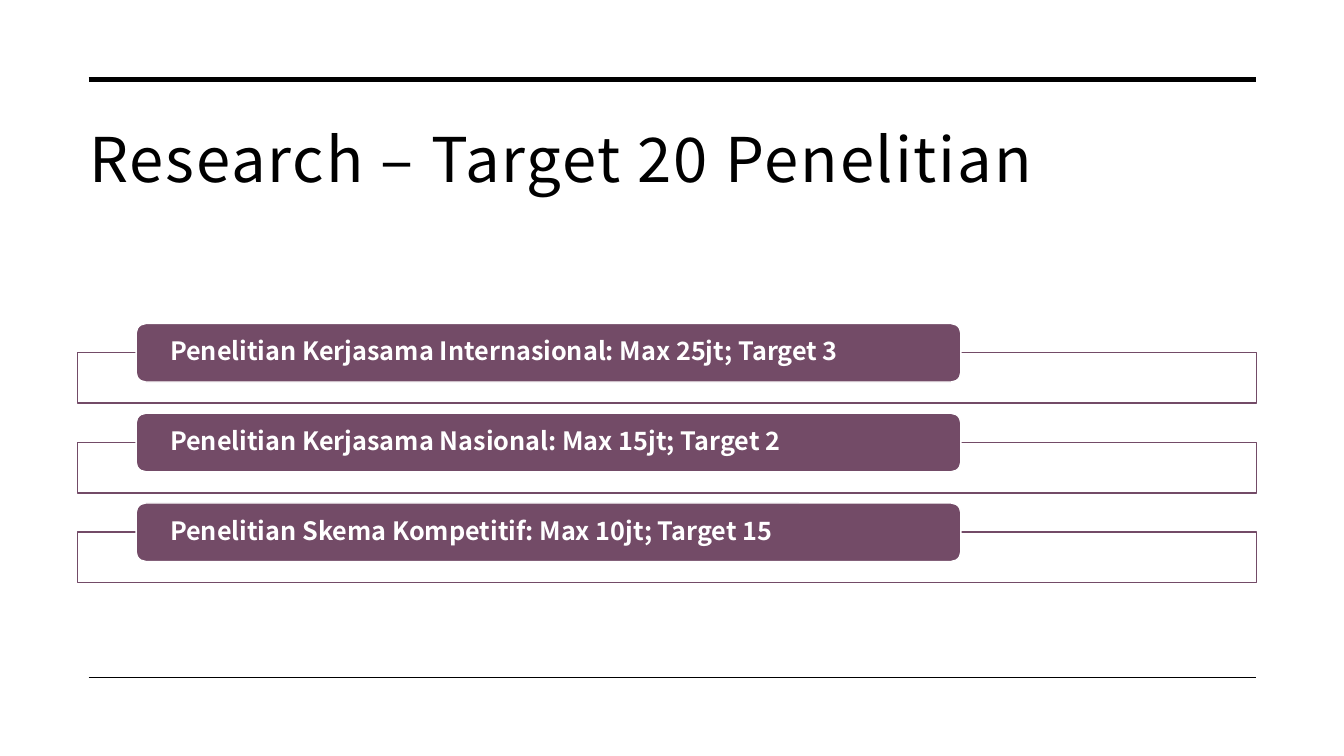
from dataclasses import dataclass

from lxml.etree import SubElement
from pptx import Presentation
from pptx.dml.color import RGBColor
from pptx.enum.shapes import MSO_CONNECTOR as Connector, MSO_SHAPE as Shape
from pptx.enum.text import MSO_ANCHOR as Anchor, PP_ALIGN as Align
from pptx.oxml.ns import qn
from pptx.util import Inches, Pt


@dataclass(frozen=True)
class Theme:
    font: str = "Noto Sans CJK JP"
    ink: RGBColor = RGBColor(0x00, 0x00, 0x00)
    paper: RGBColor = RGBColor(0xFF, 0xFF, 0xFF)
    plum: RGBColor = RGBColor(0x73, 0x4B, 0x67)
    title_size: int = 44
    label_size: int = 18


class SlideBuilder:
    def __init__(self, slide, theme):
        self.slide = slide
        self.theme = theme

    def rule(self, left, right, y, weight):
        line = self.slide.shapes.add_connector(
            Connector.STRAIGHT, Inches(left), Inches(y), Inches(right), Inches(y))
        line.line.color.rgb = self.theme.ink
        line.line.width = Pt(weight)
        SubElement(line._element.spPr, qn("a:effectLst"))

    def box(self, kind, left, top, width, height, fill, outline, opacity=100):
        shape = self.slide.shapes.add_shape(
            kind, Inches(left), Inches(top), Inches(width), Inches(height))
        shape.shadow.inherit = False
        shape.fill.solid()
        shape.fill.fore_color.rgb = fill
        shape.line.color.rgb = outline
        shape.line.width = Pt(1)
        if opacity < 100:
            color = shape._element.spPr.find(qn("a:solidFill"))[0]
            SubElement(color, qn("a:alpha"), val=str(opacity * 1000))
        return shape

    def add_words(self, shape, words, size, color, margins, anchor,
                  leading, bold=False, tracking=0):
        frame = shape.text_frame
        frame.word_wrap = True
        frame.vertical_anchor = anchor
        (frame.margin_left, frame.margin_top,
         frame.margin_right, frame.margin_bottom) = map(Inches, margins)
        paragraph = frame.paragraphs[0]
        paragraph.alignment = Align.LEFT
        paragraph.line_spacing = leading
        run = paragraph.add_run()
        run.text = words
        run.font.name = self.theme.font
        run.font.size = Pt(size)
        run.font.bold = bold
        run.font.color.rgb = color
        if tracking:
            run.font._element.set("spc", str(round(tracking * 100)))

    def title(self, words, left, top, width, height):
        heading = self.slide.shapes.add_textbox(
            Inches(left), Inches(top), Inches(width), Inches(height))
        self.add_words(heading, words, self.theme.title_size, self.theme.ink,
                       (0.12, 0.12, 0.12, 0.1), Anchor.TOP, 1.1, tracking=1.3)

    def scheme(self, words, top):
        """A wide outlined frame with a filled label over its top edge."""
        theme = self.theme
        self.box(Shape.RECTANGLE, 0.77, top + 0.29, 11.69, 0.5,
                 theme.paper, theme.plum, opacity=90)
        label = self.box(Shape.ROUNDED_RECTANGLE, 1.35, top, 8.18, 0.58,
                         theme.plum, theme.paper)
        self.add_words(label, words, theme.label_size, theme.paper,
                       (0.31, 0, 0.31, 0), Anchor.MIDDLE, 0.9, bold=True)


SCHEMES = [
    "Penelitian Kerjasama Internasional: Max 25jt; Target 3",
    "Penelitian Kerjasama Nasional: Max 15jt; Target 2",
    "Penelitian Skema Kompetitif: Max 10jt; Target 15",
]
FIRST_TOP, PITCH = 3.21, 0.89


def main():
    deck = Presentation()
    deck.slide_width, deck.slide_height = Inches(13.33), Inches(7.5)
    page = SlideBuilder(deck.slides.add_slide(deck.slide_layouts[6]), Theme())

    # Rules above and below the content
    page.rule(0.88, 12.46, 0.79, 3.5)
    page.rule(0.88, 12.46, 6.72, 1)

    # Title
    page.title("Research – Target 20 Penelitian", 0.77, 1.01, 11.69, 1.5)

    # Research schemes
    for row, words in enumerate(SCHEMES):
        page.scheme(words, FIRST_TOP + row * PITCH)

    deck.save("out.pptx")


if __name__ == "__main__":
    main()
